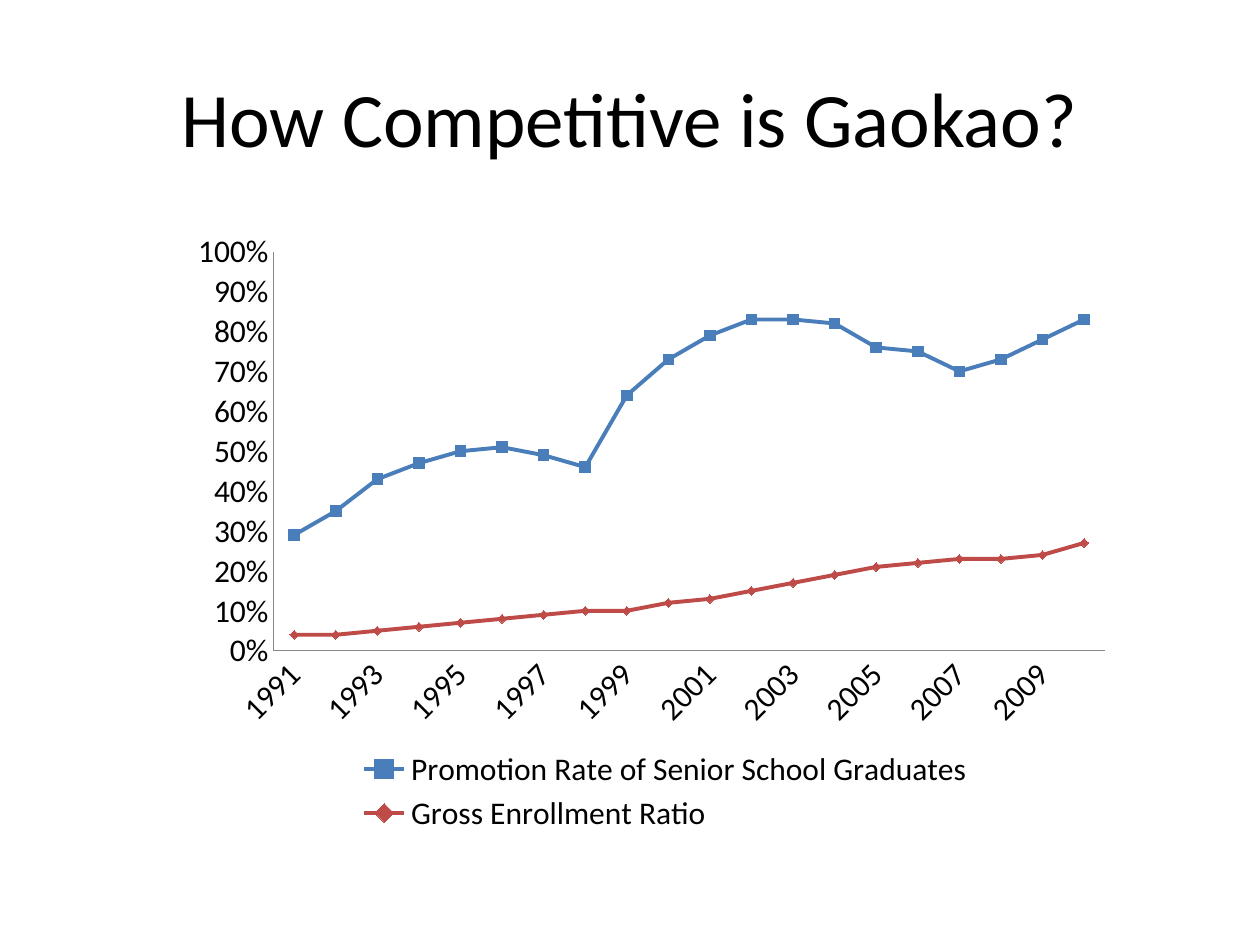
import pptx
import pptx.chart.data
import pptx.dml.color
import pptx.enum.chart
import pptx.enum.text
import pptx.oxml
import pptx.oxml.ns
import pptx.util

SLIDE_W, SLIDE_H = 10, 7.5
FONT = "Calibri"
COLORS = {
    "text": "000000",
    "axis": "878787",
    "promotion": "4F81BD",
    "promotion_line": "4A7EBB",
    "enrollment": "C0504D",
    "enrollment_line": "BE4B48",
}
YEARS = range(1991, 2011)
MARKER = pptx.enum.chart.XL_MARKER_STYLE
# Name, colour key, marker, marker size, yearly shares
SERIES = [
    ("Promotion Rate of Senior School Graduates", "promotion", MARKER.SQUARE, 6,
     [0.29, 0.35, 0.43, 0.47, 0.5, 0.51, 0.49, 0.46, 0.64, 0.73,
      0.79, 0.83, 0.83, 0.82, 0.76, 0.75, 0.7, 0.73, 0.78, 0.83]),
    ("Gross Enrollment Ratio", "enrollment", MARKER.DIAMOND, 5,
     [0.04, 0.04, 0.05, 0.06, 0.07, 0.08, 0.09, 0.1, 0.1, 0.12,
      0.13, 0.15, 0.17, 0.19, 0.21, 0.22, 0.23, 0.23, 0.24, 0.27]),
]


def rgb(name):
    return pptx.dml.color.RGBColor.from_string(COLORS[name])


def style_font(font, size):
    font.name = FONT
    font.size = pptx.util.Pt(size)
    font.color.rgb = rgb("text")


def inches(box):
    return [pptx.util.Inches(v) for v in box]


def manual_layout(box, inner=False):
    """Layout element for a box given as shares of the chart's size."""
    target = '<c:layoutTarget val="inner"/>' if inner else ""
    modes = '<c:xMode val="edge"/><c:yMode val="edge"/>'
    sizes = "".join(f'<c:{k} val="{v}"/>' for k, v in zip("xywh", box))
    ns = pptx.oxml.ns.nsdecls("c")
    return pptx.oxml.parse_xml(
        f"<c:layout {ns}><c:manualLayout>{target}{modes}{sizes}"
        "</c:manualLayout></c:layout>")


def add_title(s, text, box):
    sp = s.shapes.title
    sp.left, sp.top, sp.width, sp.height = inches(box)
    tf = sp.text_frame
    tf.text = text
    tf.vertical_anchor = pptx.enum.text.MSO_ANCHOR.MIDDLE
    p = tf.paragraphs[0]
    p.alignment = pptx.enum.text.PP_ALIGN.CENTER
    style_font(p.runs[0].font, 44)


def style_axes(chart):
    for axis in (chart.category_axis, chart.value_axis):
        axis.has_major_gridlines = False
        axis.major_tick_mark = pptx.enum.chart.XL_TICK_MARK.NONE
        axis.minor_tick_mark = pptx.enum.chart.XL_TICK_MARK.NONE
        axis.format.line.color.rgb = rgb("axis")
        axis.format.line.width = pptx.util.Pt(0.75)
        style_font(axis.tick_labels.font, 18)
    value_axis = chart.value_axis
    value_axis.minimum_scale, value_axis.maximum_scale = 0, 1
    value_axis.major_unit = 0.1
    value_axis.tick_labels.number_format = "0%"
    value_axis.tick_labels.number_format_is_linked = False

    # Slanted labels, every second year
    qn = pptx.oxml.ns.qn
    cat_ax = chart.category_axis._element
    cat_ax.find(qn("c:txPr")).find(qn("a:bodyPr")).set("rot", "-2700000")
    skip = pptx.oxml.parse_xml(
        f'<c:tickLblSkip {pptx.oxml.ns.nsdecls("c")} val="2"/>')
    cat_ax.find(qn("c:noMultiLvlLbl")).addprevious(skip)


def style_series(series, color, marker, size):
    series.smooth = False
    series.format.line.color.rgb = rgb(color + "_line")
    series.format.line.width = pptx.util.Pt(2.25)
    series.marker.style = marker
    series.marker.size = size
    series.marker.format.fill.solid()
    series.marker.format.fill.fore_color.rgb = rgb(color)
    series.marker.format.line.color.rgb = rgb(color + "_line")


def add_rates_chart(s, box):
    data = pptx.chart.data.CategoryChartData(number_format="0%")
    data.categories = [str(year) for year in YEARS]
    for name, *_, values in SERIES:
        data.add_series(name, values)
    chart = s.shapes.add_chart(
        pptx.enum.chart.XL_CHART_TYPE.LINE_MARKERS, *inches(box), data).chart
    chart.has_title = False
    style_font(chart.font, 18)
    chart.plots[0].vary_by_categories = False
    for series, (_, color, marker, size, _) in zip(chart.plots[0].series, SERIES):
        style_series(series, color, marker, size)
    style_axes(chart)

    # Legend in two rows below the plot
    chart.has_legend = True
    legend = chart.legend
    legend.position = pptx.enum.chart.XL_LEGEND_POSITION.BOTTOM
    legend.include_in_layout = False
    style_font(legend.font, 18)

    qn = pptx.oxml.ns.qn
    for old in legend._element.findall(qn("c:layout")):
        legend._element.remove(old)
    legend._element.find(qn("c:legendPos")).addnext(
        manual_layout((0.18, 0.84, 0.67, 0.15)))
    plot_area = chart._chartSpace.chart.plotArea
    for old in plot_area.findall(qn("c:layout")):
        plot_area.remove(old)
    plot_area.insert(0, manual_layout((0.1, 0.05, 0.88, 0.64), inner=True))


def main():
    prs = pptx.Presentation()
    prs.slide_width, prs.slide_height = inches((SLIDE_W, SLIDE_H))
    s = prs.slides.add_slide(prs.slide_layouts[5])
    add_title(s, "How Competitive is Gaokao?",
              (0.05 * SLIDE_W, 0.04 * SLIDE_H, 0.9 * SLIDE_W, 1.25))
    add_rates_chart(s, (1.42, 1.75, 0.75 * SLIDE_W, 0.66 * SLIDE_H))
    prs.save("out.pptx")


if __name__ == "__main__":
    main()
